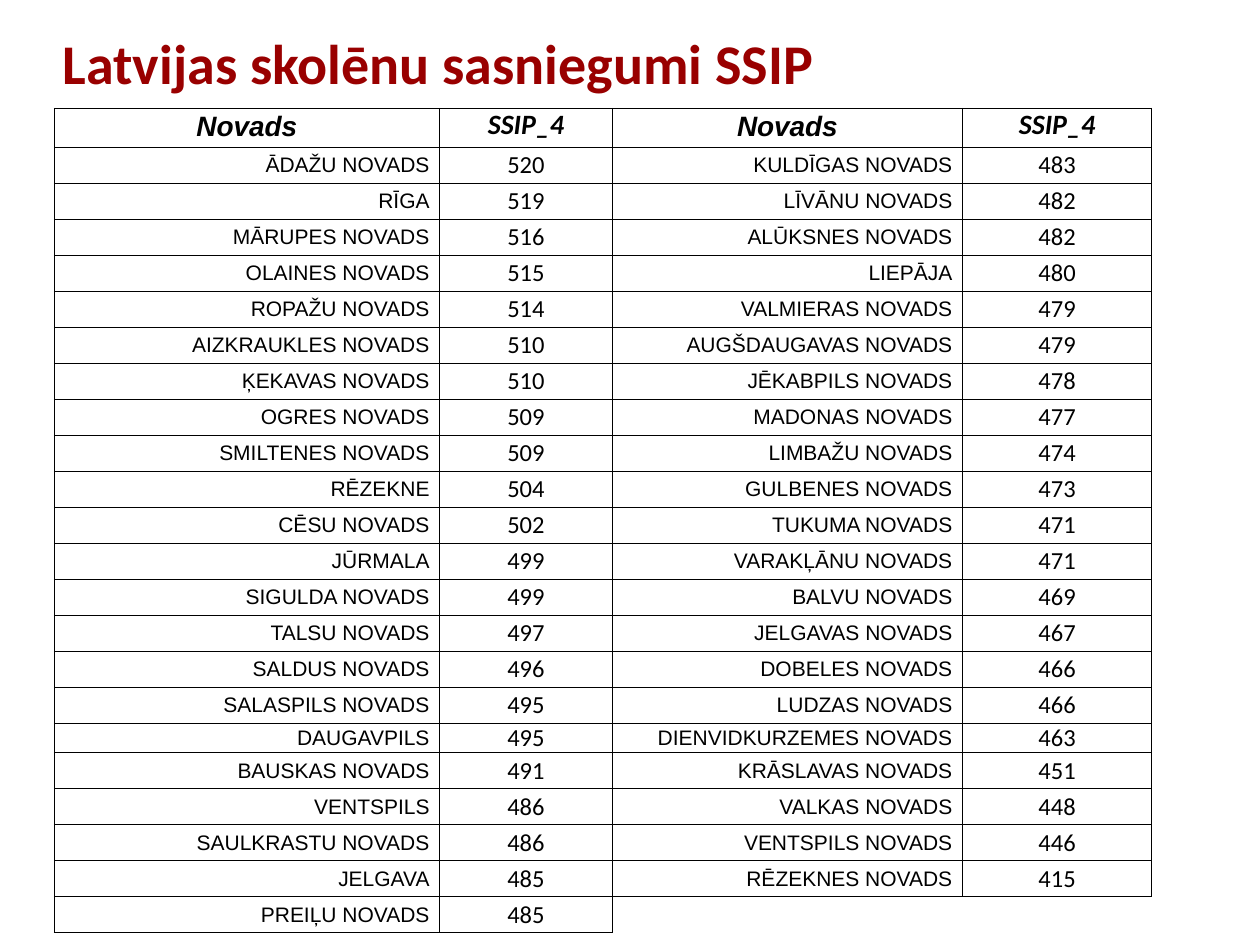
from dataclasses import dataclass
from itertools import zip_longest

from lxml import etree
from pptx import Presentation
from pptx import util as u
from pptx.dml.color import RGBColor
from pptx.enum import text
from pptx.oxml import ns

RED = RGBColor(0x99, 0x00, 0x00)
BLACK = RGBColor(0x00, 0x00, 0x00)
WHITE = RGBColor(0xFF, 0xFF, 0xFF)
WIDE, HIGH = u.Inches(10), u.Inches(7.5)
PLAIN = "{2D5ABB26-0587-4C30-8999-92F81FD0307C}"
COLS = (3.06, 1.37, 2.78, 1.5)
ROW, SLIM, SLIM_AT = u.Pt(20.6), u.Pt(16), 17


@dataclass(frozen=True)
class Style:
    face: str
    size: int
    align: text.PP_ALIGN
    anchor: text.MSO_ANCHOR = text.MSO_ANCHOR.MIDDLE
    foot: float = 0
    strong: bool = False


@dataclass(frozen=True)
class Score:
    name: str
    mark: int


MID, END = text.PP_ALIGN.CENTER, text.PP_ALIGN.RIGHT
LOW = text.MSO_ANCHOR.BOTTOM
HEADS = (
    ("Novads", Style("Arial", 16, MID, LOW, 0.04, True)),
    ("SSIP_4", Style("Calibri", 16, MID, LOW, 0.04, True)),
)
NAME = Style("Arial", 12, END)
MARK = Style("Calibri", 14, MID)

LEFT = (
    Score("ĀDAŽU NOVADS", 520),
    Score("RĪGA", 519),
    Score("MĀRUPES NOVADS", 516),
    Score("OLAINES NOVADS", 515),
    Score("ROPAŽU NOVADS", 514),
    Score("AIZKRAUKLES NOVADS", 510),
    Score("ĶEKAVAS NOVADS", 510),
    Score("OGRES NOVADS", 509),
    Score("SMILTENES NOVADS", 509),
    Score("RĒZEKNE", 504),
    Score("CĒSU NOVADS", 502),
    Score("JŪRMALA", 499),
    Score("SIGULDA NOVADS", 499),
    Score("TALSU NOVADS", 497),
    Score("SALDUS NOVADS", 496),
    Score("SALASPILS NOVADS", 495),
    Score("DAUGAVPILS", 495),
    Score("BAUSKAS NOVADS", 491),
    Score("VENTSPILS", 486),
    Score("SAULKRASTU NOVADS", 486),
    Score("JELGAVA", 485),
    Score("PREIĻU NOVADS", 485),
)
RIGHT = (
    Score("KULDĪGAS NOVADS", 483),
    Score("LĪVĀNU NOVADS", 482),
    Score("ALŪKSNES NOVADS", 482),
    Score("LIEPĀJA", 480),
    Score("VALMIERAS NOVADS", 479),
    Score("AUGŠDAUGAVAS NOVADS", 479),
    Score("JĒKABPILS NOVADS", 478),
    Score("MADONAS NOVADS", 477),
    Score("LIMBAŽU NOVADS", 474),
    Score("GULBENES NOVADS", 473),
    Score("TUKUMA NOVADS", 471),
    Score("VARAKĻĀNU NOVADS", 471),
    Score("BALVU NOVADS", 469),
    Score("JELGAVAS NOVADS", 467),
    Score("DOBELES NOVADS", 466),
    Score("LUDZAS NOVADS", 466),
    Score("DIENVIDKURZEMES NOVADS", 463),
    Score("KRĀSLAVAS NOVADS", 451),
    Score("VALKAS NOVADS", 448),
    Score("VENTSPILS NOVADS", 446),
    Score("RĒZEKNES NOVADS", 415),
)


def set_font(par, face: str, size: int, hue: RGBColor, bold: bool) -> None:
    font = par.font
    font.name, font.size, font.bold = face, u.Pt(size), bold
    font.color.rgb = hue


def add_edges(cell) -> None:
    props = cell._tc.get_or_add_tcPr()
    for side in "LRTB":
        line = etree.SubElement(props, ns.qn(f"a:ln{side}"), w=str(u.Pt(0.5)))
        fill = etree.SubElement(line, ns.qn("a:solidFill"))
        etree.SubElement(fill, ns.qn("a:srgbClr"), val=str(BLACK))


def fill_cell(cell, words: str, style: Style) -> None:
    if words:
        add_edges(cell)
    cell.fill.solid()
    cell.fill.fore_color.rgb = WHITE
    cell.margin_left = cell.margin_right = u.Inches(0.08)
    cell.margin_top, cell.margin_bottom = 0, u.Inches(style.foot)
    cell.vertical_anchor = style.anchor
    par = cell.text_frame.paragraphs[0]
    par.text, par.alignment = words, style.align
    set_font(par, style.face, style.size, BLACK, style.strong)
    par.font.italic = style.strong


def add_title(slide) -> None:
    box = slide.shapes.add_textbox(
        int(WIDE * 0.04), u.Inches(0.19), u.Inches(8.62), u.Inches(0.67))
    frame = box.text_frame
    frame.word_wrap = True
    frame.vertical_anchor = text.MSO_ANCHOR.MIDDLE
    par = frame.paragraphs[0]
    par.text, par.line_spacing = "Latvijas skolēnu sasniegumi SSIP", 0.9
    set_font(par, "Calibri", 32, RED, True)


def pair(score: Score | None) -> list[tuple[str, Style]]:
    name, mark = (score.name, str(score.mark)) if score else ("", "")
    return [(name, NAME), (mark, MARK)]


def add_scores(slide) -> None:
    lines = [HEADS * 2]
    lines += [pair(a) + pair(b) for a, b in zip_longest(LEFT, RIGHT)]
    frame = slide.shapes.add_table(
        len(lines), len(COLS), u.Inches(0.43), u.Inches(0.86),
        u.Inches(sum(COLS)), ROW * (len(lines) - 1) + SLIM)
    grid = frame.table
    grid.first_row = grid.horz_banding = False
    grid._tbl.tblPr.find(ns.qn("a:tableStyleId")).text = PLAIN
    for col, width in zip(grid.columns, COLS):
        col.width = u.Inches(width)
    for i, line in enumerate(lines):
        grid.rows[i].height = SLIM if i == SLIM_AT else ROW
        for j, (words, style) in enumerate(line):
            fill_cell(grid.cell(i, j), words, style)


def main() -> None:
    deck = Presentation()
    deck.slide_width, deck.slide_height = WIDE, HIGH
    slide = deck.slides.add_slide(deck.slide_layouts[6])
    add_title(slide)
    add_scores(slide)
    deck.save("out.pptx")


if __name__ == "__main__":
    main()
